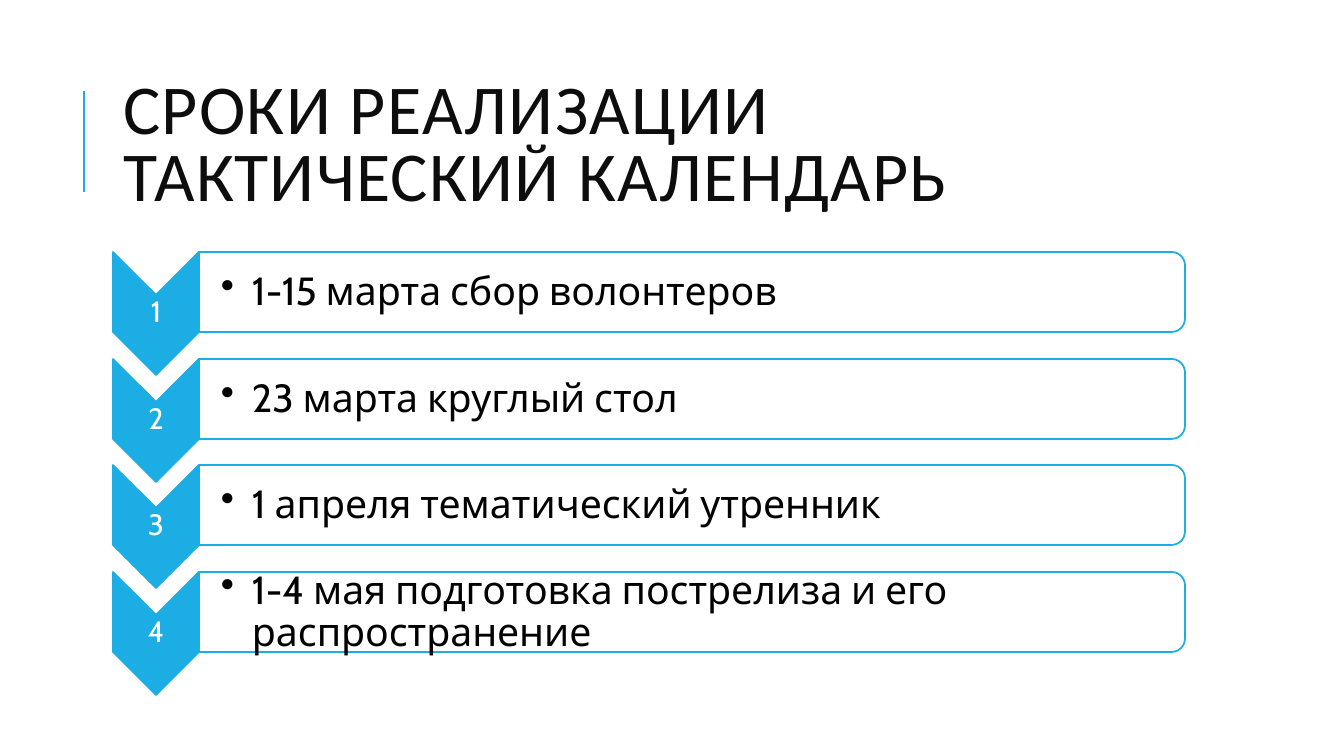
import pptx
import pptx.util
import pptx.dml.color
import pptx.enum.shapes
import pptx.enum.text
import pptx.oxml.ns
import lxml.etree

TITLE = ["СРОКИ РЕАЛИЗАЦИИ", "ТАКТИЧЕСКИЙ КАЛЕНДАРЬ"]
STEPS = [
    "1-15 марта сбор волонтеров",
    "23 марта круглый стол",
    "1 апреля тематический утренник",
    "1-4 мая подготовка пострелиза и его распространение",
]
COLORS = {"blue": "1CADE4", "white": "FFFFFF", "black": "000000", "title": "0D0D0D"}

# Lengths in px
SLIDE = (1344, 756)
TITLE_BOX = (113, 65, 1072, 165)
RULE = (84, 192, 84, 91)
TOP, SPAN = 252, 320          # first row top, distance to the last row top
CHEVRON = (113, 86, 123)      # left, width, height as seen
BAR = (199, 986, 80)
NUMBER = (43, 37)             # offset from row top, height
BODY = (4, 982, 73)           # offset from row top, width, height

SHAPES = pptx.enum.shapes.MSO_SHAPE
ALIGN = pptx.enum.text.PP_ALIGN
Pt = pptx.util.Pt
qn = pptx.oxml.ns.qn


def px(n):
    return pptx.util.Emu(round(n * 914400 / 100.8))


def rgb(name):
    return pptx.dml.color.RGBColor.from_string(COLORS[name])


def style(run, font, size, color):
    run.font.name = font
    run.font.size = Pt(size)
    run.font.color.rgb = rgb(color)


def turned(slide, kind, left, top, wide, high, fill):
    """Add a shape rotated by 90 degrees that covers the given box."""
    shift = (wide - high) / 2
    shape = slide.shapes.add_shape(
        kind, px(left + shift), px(top - shift), px(high), px(wide))
    shape.rotation = 90
    shape.shadow.inherit = False
    shape.fill.solid()
    shape.fill.fore_color.rgb = rgb(fill)
    shape.line.color.rgb = rgb("blue")
    shape.line.width = Pt(1.25)
    return shape


def label(slide, box, text, size, color, inset, pad):
    frame = slide.shapes.add_textbox(*map(px, box)).text_frame
    frame.word_wrap = True
    frame.vertical_anchor = pptx.enum.text.MSO_ANCHOR.MIDDLE
    frame.margin_left = px(inset)
    frame.margin_right = frame.margin_top = frame.margin_bottom = px(pad)
    para = frame.paragraphs[0]
    para.line_spacing = 0.9
    run = para.add_run()
    run.text = text
    style(run, "Cabin", size, color)
    return para


def bullet(para, indent):
    para.level = 1
    props = para._p.get_or_add_pPr()
    props.set("marL", str(px(indent)))
    props.set("indent", str(px(-indent)))
    lxml.etree.SubElement(props, qn("a:buChar")).set("char", "•")


def add_title(slide):
    title = slide.shapes.title
    title.left, title.top, title.width, title.height = map(px, TITLE_BOX)
    frame = title.text_frame
    frame.auto_size = pptx.enum.text.MSO_AUTO_SIZE.NONE
    frame.vertical_anchor = pptx.enum.text.MSO_ANCHOR.MIDDLE
    para = frame.paragraphs[0]
    para.alignment = ALIGN.LEFT
    para.line_spacing = 0.8
    for i, line in enumerate(TITLE):
        if i:
            para.add_line_break()
        run = para.add_run()
        run.text = line
        style(run, "Calibri", 50, "title")
        run.font._element.set("spc", "100")


def add_rule(slide):
    rule = slide.shapes.add_connector(
        pptx.enum.shapes.MSO_CONNECTOR.STRAIGHT, *map(px, RULE))
    rule.line.color.rgb = rgb("blue")
    rule.line.width = Pt(1.5)
    lxml.etree.SubElement(rule._element.spPr, qn("a:effectLst"))


def add_step(slide, num, text, top):
    left, wide, high = CHEVRON
    turned(slide, SHAPES.CHEVRON, left, top, wide, high, "blue")
    drop, tall = NUMBER
    para = label(slide, (left, top + drop, wide, tall), str(num), 21, "white", 1, 1)
    para.alignment = ALIGN.CENTER

    left, wide, high = BAR
    bar = turned(slide, SHAPES.ROUND_2_SAME_RECTANGLE, left, top, wide, high, "white")
    tint = bar._element.spPr.find(qn("a:solidFill"))[0]
    lxml.etree.SubElement(tint, qn("a:alpha")).set("val", "90000")
    drop, wide, high = BODY
    para = label(slide, (left, top + drop, wide, high), text, 28, "black", 22, 2)
    bullet(para, 31)


def main():
    deck = pptx.Presentation()
    deck.slide_width, deck.slide_height = map(px, SLIDE)
    slide = deck.slides.add_slide(deck.slide_layouts[5])
    add_rule(slide)
    add_title(slide)
    pitch = SPAN / (len(STEPS) - 1)
    for i, text in enumerate(STEPS):
        add_step(slide, i + 1, text, round(TOP + i * pitch))
    deck.save("out.pptx")


if __name__ == "__main__":
    main()
